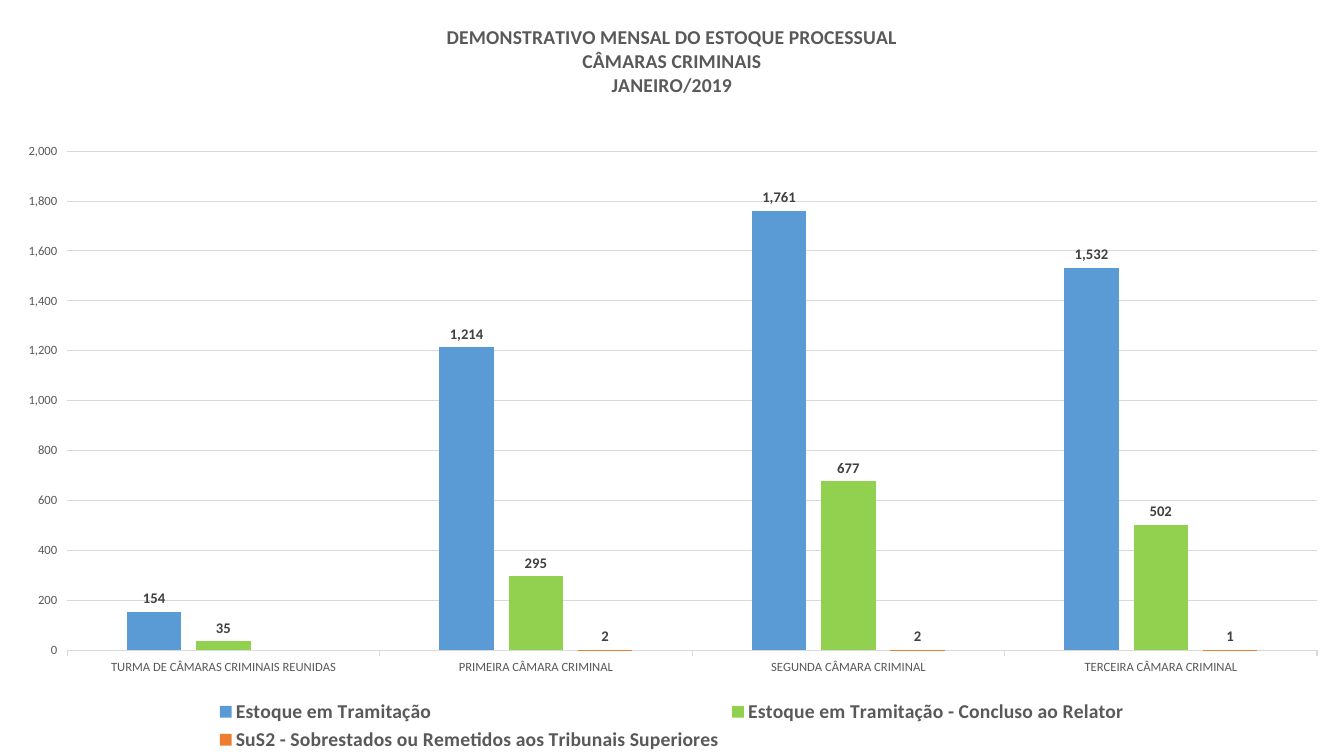
"""Build a slide with the monthly case stock of the criminal chambers as a column chart."""
import pptx
import pptx.chart.data
import pptx.dml.color
import pptx.enum.chart
import pptx.oxml
import pptx.util

Pt = pptx.util.Pt
COLORS = {"blue": "5B9BD5", "green": "92D050", "orange": "ED7D31",
          "text": "595959", "label": "404040", "grid": "D9D9D9"}
TITLE = ["DEMONSTRATIVO MENSAL DO ESTOQUE PROCESSUAL", "CÂMARAS CRIMINAIS", "JANEIRO/2019"]
CHAMBERS = ["TURMA DE CÂMARAS CRIMINAIS REUNIDAS", "PRIMEIRA CÂMARA CRIMINAL",
            "SEGUNDA CÂMARA CRIMINAL", "TERCEIRA CÂMARA CRIMINAL"]
STOCK = [
    ("Estoque em Tramitação", "blue", [154, 1214, 1761, 1532]),
    ("Estoque em Tramitação - Concluso ao Relator", "green", [35, 295, 677, 502]),
    ("SuS2 - Sobrestados ou Remetidos aos Tribunais Superiores", "orange", [None, 2, 2, 1]),
]
PLOT_LAYOUT = {"x": 0.05, "y": 0.2, "w": 0.93, "h": 0.66}


def color(name):
    return pptx.dml.color.RGBColor.from_string(COLORS[name])


def style_font(font, size, bold, name):
    for key, value in {"name": "Calibri", "size": Pt(size), "bold": bold}.items():
        setattr(font, key, value)
    font.color.rgb = color(name)


deck = pptx.Presentation()
deck.slide_width, deck.slide_height = Pt(960), Pt(540)
page = deck.slides.add_slide(deck.slide_layouts[6])

data = pptx.chart.data.CategoryChartData(number_format="#,##0")
data.categories = CHAMBERS
for name, fill, values in STOCK:
    data.add_series(name, values)
chart = page.shapes.add_chart(pptx.enum.chart.XL_CHART_TYPE.COLUMN_CLUSTERED,
                              0, 0, Pt(960), Pt(540), data).chart
style_font(chart.font, 10, False, "text")

chart.has_title = True
title_frame = chart.chart_title.text_frame
for index, line in enumerate(TITLE):
    para = title_frame.add_paragraph() if index else title_frame.paragraphs[0]
    span = para.add_run()
    span.text = line
    style_font(span.font, 14, True, "text")

chart.has_legend = True
chart.legend.position = pptx.enum.chart.XL_LEGEND_POSITION.BOTTOM
chart.legend.include_in_layout = False
style_font(chart.legend.font, 14, True, "text")

for axis in (chart.category_axis, chart.value_axis):
    style_font(axis.tick_labels.font, 9, False, "text")
    axis.major_tick_mark = pptx.enum.chart.XL_TICK_MARK.OUTSIDE

chart.value_axis.format.line.fill.background()
chart.value_axis.has_major_gridlines = True
for key, value in {"minimum_scale": 0, "maximum_scale": 2000, "major_unit": 200}.items():
    setattr(chart.value_axis, key, value)
chart.value_axis.tick_labels.number_format = "#,##0"
chart.value_axis.tick_labels.number_format_is_linked = False
for line in (chart.category_axis.format.line, chart.value_axis.major_gridlines.format.line):
    line.color.rgb = color("grid")
    line.width = Pt(0.75)

plot = chart.plots[0]
for key, value in {"gap_width": 219, "overlap": -27, "vary_by_categories": False}.items():
    setattr(plot, key, value)
for series, (name, fill, values) in zip(plot.series, STOCK):
    series.format.fill.solid()
    series.format.fill.fore_color.rgb = color(fill)
    series.invert_if_negative = False
    labels = series.data_labels
    labels.show_value = True
    labels.position = pptx.enum.chart.XL_LABEL_POSITION.OUTSIDE_END
    style_font(labels.font, 10.5, True, "label")

plot_area = chart.element.xpath("c:chart/c:plotArea")[0]
for layout in plot_area.xpath("c:layout"):
    plot_area.remove(layout)
edges = "".join(f'<c:{key} val="{value}"/>' for key, value in PLOT_LAYOUT.items())
plot_area.insert(0, pptx.oxml.parse_xml(
    '<c:layout xmlns:c="http://schemas.openxmlformats.org/drawingml/2006/chart">'
    '<c:manualLayout><c:layoutTarget val="inner"/><c:xMode val="edge"/><c:yMode val="edge"/>'
    f'{edges}</c:manualLayout></c:layout>'))

deck.save("out.pptx")
